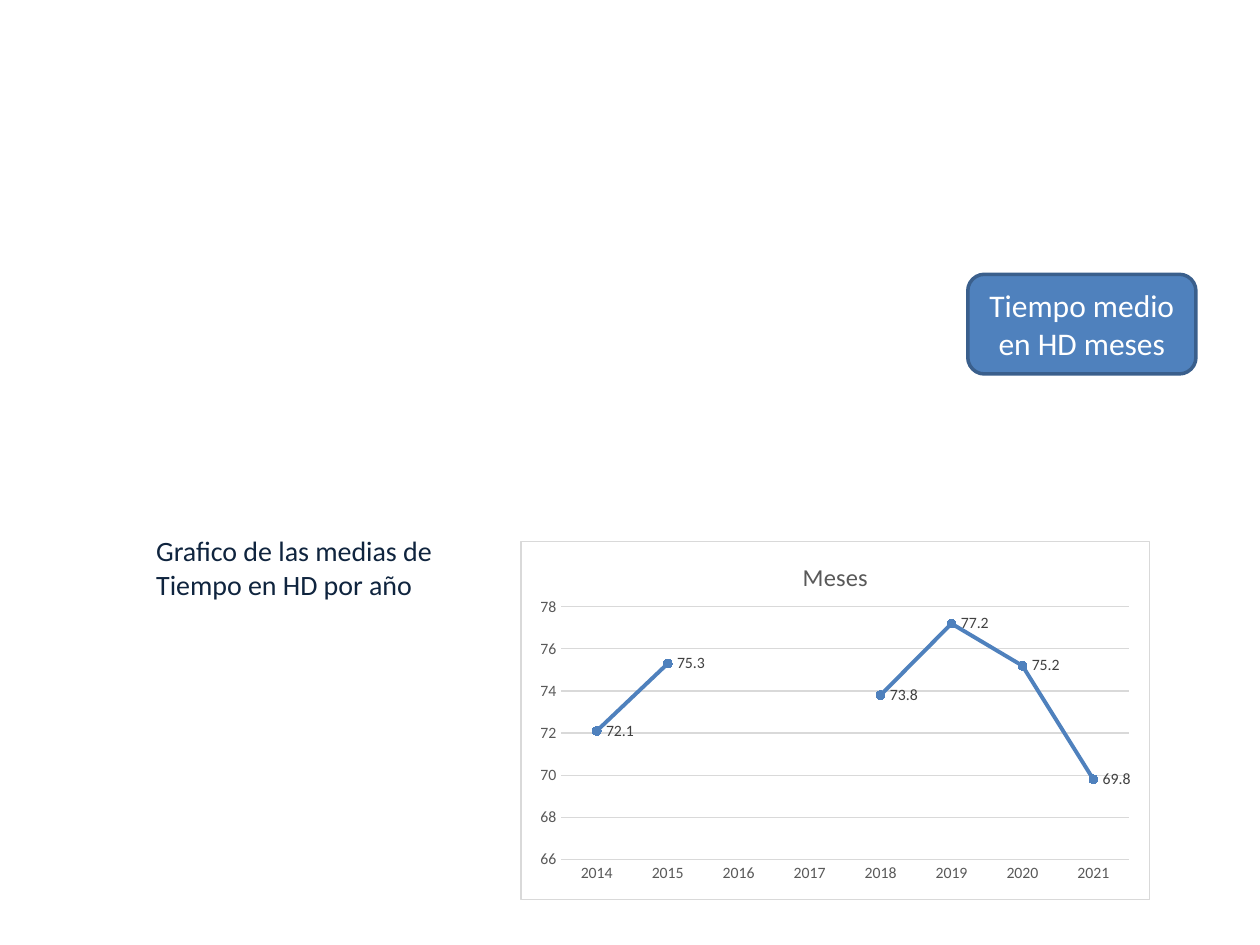
from lxml import etree
from pptx import Presentation
from pptx.chart.data import CategoryChartData
from pptx.dml.color import RGBColor
from pptx.enum.chart import XL_CHART_TYPE as Kind
from pptx.enum.chart import XL_LABEL_POSITION as Spot
from pptx.enum.chart import XL_MARKER_STYLE as Mark
from pptx.enum.chart import XL_TICK_MARK as Tick
from pptx.enum.shapes import MSO_SHAPE as Form
from pptx.enum.text import MSO_ANCHOR as Anchor
from pptx.enum.text import PP_ALIGN as Align
from pptx.oxml import parse_xml
from pptx.oxml.ns import nsdecls, qn
from pptx.util import Cm, Pt

BLUE = RGBColor(0x4F, 0x81, 0xBD)
EDGE = RGBColor(0x3A, 0x5F, 0x8C)
NAVY = RGBColor(0x0F, 0x24, 0x3E)
GRAY = RGBColor(0x59, 0x59, 0x59)
DARK = RGBColor(0x40, 0x40, 0x40)
PALE = RGBColor(0xD9, 0xD9, 0xD9)
WHITE = RGBColor(0xFF, 0xFF, 0xFF)


def style(font, size, color):
    font.name = "Calibri"
    font.size = Pt(size)
    font.bold = False
    font.color.rgb = color


prs = Presentation()
prs.slide_width, prs.slide_height = Cm(25.4), Cm(19.05)
slide = prs.slides.add_slide(prs.slide_layouts[6])
shapes = slide.shapes

# Caption beside the chart
note = shapes.add_textbox(Cm(2.9), Cm(10.64), Cm(6.81), Cm(1.63))
note.text_frame.word_wrap = True
note.text_frame.text = "Grafico de las medias de Tiempo en HD por año"
style(note.text_frame.paragraphs[0].runs[0].font, 16, NAVY)

# Line chart of the yearly means
data = CategoryChartData(number_format="0.0")
data.categories = [str(year) for year in range(2014, 2022)]
data.add_series("Meses", [72.1, 75.3, None, None, 73.8, 77.2, 75.2, 69.8])
chart = shapes.add_chart(Kind.LINE_MARKERS, Cm(10.49), Cm(10.9),
                         Cm(12.7), Cm(7.24), data).chart
style(chart.font, 10, GRAY)
chart.has_legend = False
chart.has_title = True
title = chart.chart_title.text_frame
title.text = "Meses"
style(title.paragraphs[0].runs[0].font, 14, GRAY)

years, months = chart.category_axis, chart.value_axis
for axis in (years, months):
    axis.major_tick_mark = axis.minor_tick_mark = Tick.NONE
    style(axis.tick_labels.font, 9, GRAY)
years.format.line.color.rgb = PALE
years.format.line.width = Pt(0.75)
months.format.line.fill.background()
months.minimum_scale, months.maximum_scale = 66, 78
months.major_unit = 2
months.tick_labels.number_format = "0"
months.tick_labels.number_format_is_linked = False
months.has_major_gridlines = True
grid = months.major_gridlines.format.line
grid.color.rgb = PALE
grid.width = Pt(0.75)

plot = chart.plots[0]
plot.vary_by_categories = False
line = plot.series[0]
line.smooth = False
line.format.line.color.rgb = BLUE
line.format.line.width = Pt(2.25)
mark = line.marker
mark.style = Mark.CIRCLE
mark.size = 5
mark.format.fill.solid()
mark.format.fill.fore_color.rgb = BLUE
mark.format.line.color.rgb = BLUE
tags = line.data_labels
tags.show_value = True
tags.position = Spot.RIGHT
style(tags.font, 9, DARK)

# Chart frame and inner plot area
root = chart.element
body = root.find(qn("c:chart"))
body.addnext(parse_xml(
    f'<c:spPr {nsdecls("c", "a")}>'
    f'<a:solidFill><a:srgbClr val="{WHITE}"/></a:solidFill>'
    f'<a:ln w="{Pt(0.75)}"><a:solidFill><a:srgbClr val="{PALE}"/>'
    '</a:solidFill></a:ln></c:spPr>'))
area = body.find(qn("c:plotArea"))
for old in area.findall(qn("c:layout")):
    area.remove(old)
layout = parse_xml(f'<c:layout {nsdecls("c")}><c:manualLayout/></c:layout>')
area.insert(0, layout)
for tag, val in (("layoutTarget", "inner"), ("xMode", "edge"),
                 ("yMode", "edge"), ("x", "0.064"), ("y", "0.183"),
                 ("w", "0.903"), ("h", "0.706")):
    etree.SubElement(layout[0], qn(f"c:{tag}")).set("val", val)

# Heading badge
badge = shapes.add_shape(Form.ROUNDED_RECTANGLE, Cm(19.51), Cm(5.53),
                         Cm(4.6), Cm(2.01))
badge.shadow.inherit = False
badge.fill.solid()
badge.fill.fore_color.rgb = BLUE
badge.line.color.rgb = EDGE
badge.line.width = Pt(2)
frame = badge.text_frame
frame.word_wrap = True
frame.vertical_anchor = Anchor.MIDDLE
frame.text = "Tiempo medio en HD meses"
frame.paragraphs[0].alignment = Align.CENTER
style(frame.paragraphs[0].runs[0].font, 18, WHITE)

prs.save("out.pptx")
